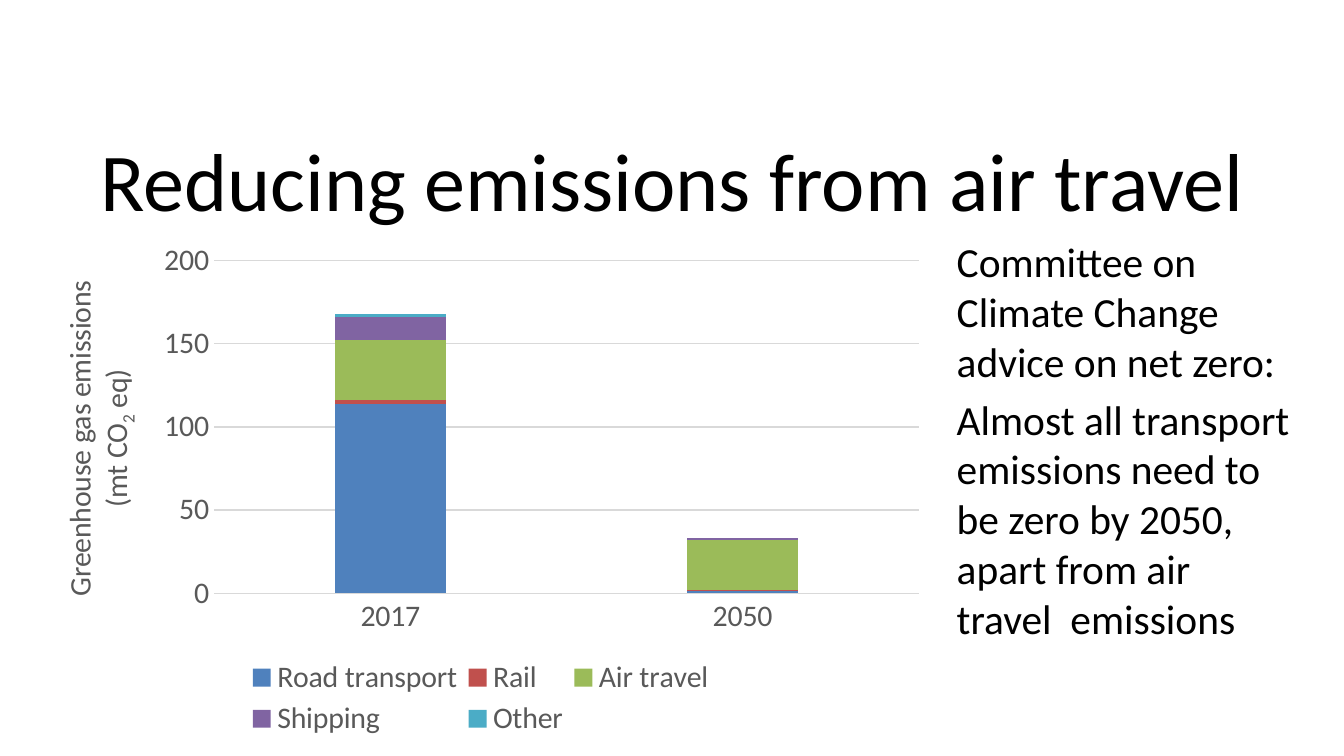
from lxml import etree
from pptx import Presentation
from pptx.chart.data import CategoryChartData
from pptx.dml.color import RGBColor
from pptx.enum.chart import XL_CHART_TYPE, XL_LEGEND_POSITION, XL_TICK_MARK
from pptx.enum.text import MSO_ANCHOR, PP_ALIGN
from pptx.oxml.ns import qn
from pptx.util import Inches, Pt

STACKED = XL_CHART_TYPE.COLUMN_STACKED
BOTTOM = XL_LEGEND_POSITION.BOTTOM
NO_TICK = XL_TICK_MARK.NONE
MIDDLE, TOP = MSO_ANCHOR.MIDDLE, MSO_ANCHOR.TOP
CENTER, LEFT = PP_ALIGN.CENTER, PP_ALIGN.LEFT

BLACK = RGBColor(0x00, 0x00, 0x00)
GREY = RGBColor(0x59, 0x59, 0x59)
PALE = RGBColor(0xD9, 0xD9, 0xD9)
BLUE = RGBColor(0x4F, 0x81, 0xBD)
RED = RGBColor(0xC0, 0x50, 0x4D)
GREEN = RGBColor(0x9B, 0xBB, 0x59)
PURPLE = RGBColor(0x80, 0x64, 0xA2)
TEAL = RGBColor(0x4B, 0xAC, 0xC6)
FONT = "Calibri"

# Content
TITLE = ["Reducing emissions from air travel"]
ADVICE = [
    "Committee on Climate Change advice on net zero:",
    "Almost all transport emissions need to be zero by 2050, "
    "apart from air travel  emissions",
]
YEARS = [2017, 2050]
SOURCES = [
    ("Road transport", (114, 1), BLUE),
    ("Rail", (2, 1), RED),
    ("Air travel", (36, 30), GREEN),
    ("Shipping", (14, 1), PURPLE),
    ("Other", (2, 0), TEAL),
]
# Axis title lines: (text, is subscript)
UNITS = [
    [("Greenhouse gas emissions", False)],
    [("(mt CO", False), ("2", True), (" eq)", False)],
]


def style(font, size, color):
    font.name, font.size, font.bold = FONT, Pt(size), False
    font.color.rgb = color


def add_text(slide, box, lines, size, align, anchor, gap=0):
    frame = slide.shapes.add_textbox(*map(Inches, box)).text_frame
    frame.word_wrap = True
    frame.vertical_anchor = anchor
    for i, line in enumerate(lines):
        para = frame.paragraphs[0] if i == 0 else frame.add_paragraph()
        para.alignment = align
        if i:
            para.space_before = Pt(gap)
        run = para.add_run()
        run.text = line
        style(run.font, size, BLACK)


def place(parent, index, box, inner=False):
    """Give a chart part a fixed place, in fractions of the chart."""
    for old in parent.findall(qn("c:layout")):
        parent.remove(old)
    layout = etree.Element(qn("c:layout"))
    parent.insert(index, layout)
    manual = etree.SubElement(layout, qn("c:manualLayout"))
    parts = [("layoutTarget", "inner")] if inner else []
    parts += [("xMode", "edge"), ("yMode", "edge")]
    parts += zip("xywh", box)
    for tag, val in parts:
        etree.SubElement(manual, qn("c:" + tag)).set("val", str(val))


# A 16:9 slide
deck = Presentation()
deck.slide_width, deck.slide_height = Inches(10), Inches(10 * 9 / 16)
slide = deck.slides.add_slide(deck.slide_layouts[6])

# Title and advice
add_text(slide, (0.2, 0.86, 9.61, 0.94), TITLE, 44, CENTER, MIDDLE)
add_text(slide, (7.02, 1.71, 2.69, 3.23), ADVICE, 22.2, LEFT, TOP, gap=4.4)

# Stacked columns
data = CategoryChartData()
data.categories = YEARS
for name, vals, _ in SOURCES:
    data.add_series(name, vals)
spot = map(Inches, (0.25, 1.71, 6.72, 3.81))
chart = slide.shapes.add_chart(STACKED, *spot, data).chart
chart.has_title = False
style(chart.font, 10, BLACK)
plot = chart.plots[0]
plot.gap_width, plot.overlap = 219, 100
plot.vary_by_categories = False
for series, (_, _, color) in zip(plot.series, SOURCES):
    series.format.fill.solid()
    series.format.fill.fore_color.rgb = color
place(chart._chartSpace.chart.plotArea, 0, (0.2, 0.06, 0.78, 0.65), inner=True)

# Axes
years, level = chart.category_axis, chart.value_axis
for axis in (years, level):
    axis.major_tick_mark = axis.minor_tick_mark = NO_TICK
    style(axis.tick_labels.font, 16, GREY)
level.minimum_scale, level.maximum_scale, level.major_unit = 0, 200, 50
level.format.line.fill.background()
level.has_major_gridlines = True
for line in (years.format.line, level.major_gridlines.format.line):
    line.color.rgb, line.width = PALE, Pt(0.75)

# Axis title
frame = level.axis_title.text_frame
body = frame._txBody.find(qn("a:bodyPr"))
body.set("rot", "-5400000")
body.set("vert", "horz")
for i, line in enumerate(UNITS):
    para = frame.paragraphs[0] if i == 0 else frame.add_paragraph()
    para.alignment = CENTER
    for text, sub in line:
        run = para.add_run()
        run.text = text
        style(run.font, 16, GREY)
        if sub:
            run.font._element.set("baseline", "-25000")

# Legend
chart.has_legend = True
legend = chart.legend
legend.position = BOTTOM
legend.include_in_layout = False
style(legend.font, 16, GREY)
place(legend._element, 1, (0.23, 0.83, 0.53, 0.17))

deck.save("out.pptx")
